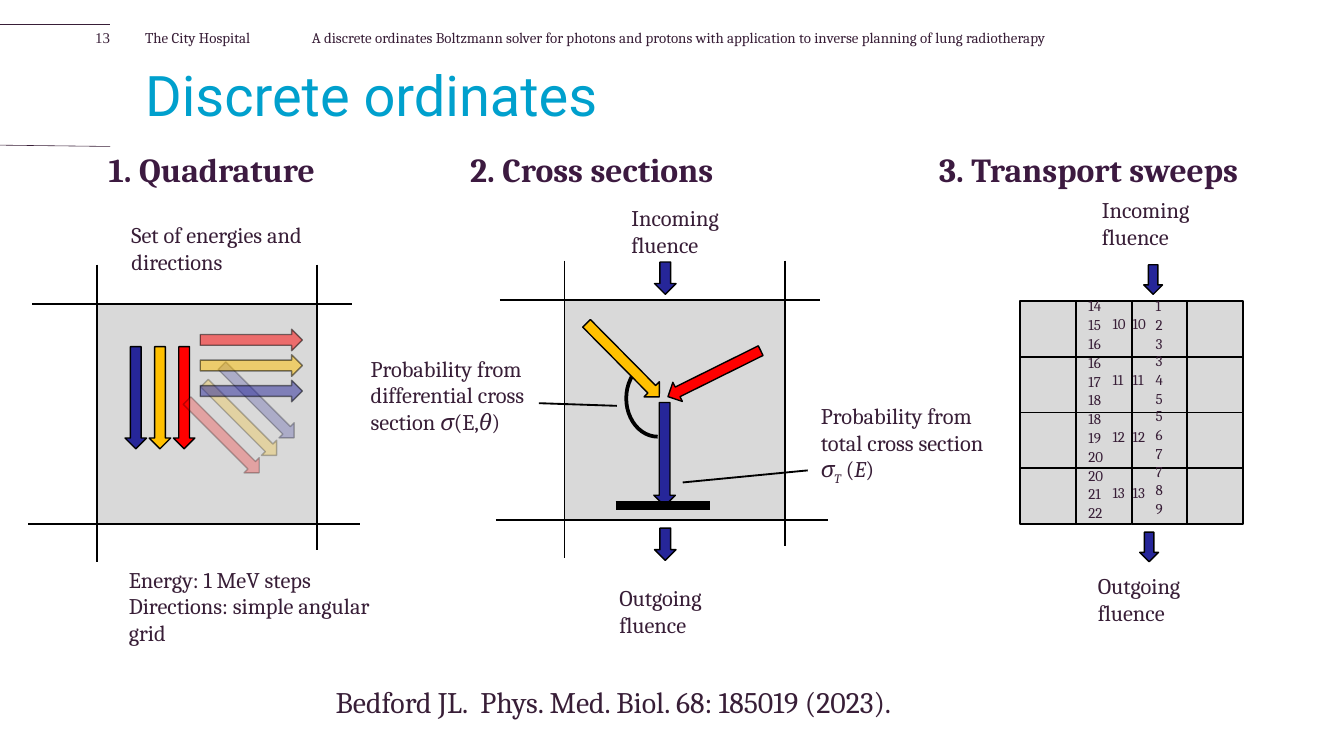
import pptx
import pptx.util
import pptx.dml.color
import pptx.enum.shapes
import pptx.enum.text
import pptx.oxml.ns
from lxml import etree

Inches, Pt = pptx.util.Inches, pptx.util.Pt
SHAPE = pptx.enum.shapes.MSO_SHAPE
INK, HEADING, CYAN = "381E37", "3C1A40", "00A0CD"
BLACK, GREY = "000000", "D9D9D9"
BLUE, YELLOW, RED = "262699", "FFC000", "FF0000"

HEADER = [
    ("The City Hospital", 1.08, 1.24, "Cambria"),
    ("A discrete ordinates Boltzmann solver for photons and protons with application "
     "to inverse planning of lung radiotherapy", 2.32, 6.45, "Cambria"),
    ("13", 0.41, 0.41, "Times New Roman"),
]
HEADER_RULES = [(0, 1.08, 0.82, 1.09), (0, 0.18, 0.82, 0.18)]
TITLE = "Discrete ordinates"
HEADINGS = [("1. Quadrature", 0.71, 2.4), ("2. Cross sections", 3.4, 2.4),
            ("3. Transport sweeps", 6.89, 2.83)]
CITATION = "Bedford JL.  Phys. Med. Biol. 68: 185019 (2023)."

CELL_SIDE = 1.64
CELL_LINES = [(-0.48, 0, 1.9, 0), (-0.51, 1.64, 1.96, 1.64),
              (0, -0.29, 0, 1.92), (1.64, -0.29, 1.64, 1.83)]

CROSS_ARROWS = [(4.93, 2.7, 0.77, 0.16, 153.6, RED), (4.25, 2.6, 0.77, 0.16, 45.3, YELLOW),
                (4.56, 3.3, 0.77, 0.16, 90, BLUE), (4.83, 3.97, 0.24, 0.16, 90, BLUE),
                (4.83, 1.99, 0.24, 0.16, 90, BLUE)]
CROSS_LINES = [(4.58, 3.76, 5.28, 3.76, 5), (6.01, 3.5, 5.08, 3.59, 1),
               (4.59, 3.02, 4.01, 3, 1)]
CROSS_LABELS = [
    ([[("Probability from differential cross section ", ""), ("σ", "i"), ("(E,", ""),
       ("θ", "i"), (")", "")]], 2.66, 2.59, 1.54, 1.36),
    ([[("Probability from total cross section ", ""), ("σ", "i"), ("T", "is"), (" (", ""),
       ("E", "i"), (")", "")]], 6.01, 2.94, 1.43, 1.11),
    ("Incoming fluence", 4.6, 1.47, 1.24, 0.62),
    ("Outgoing fluence", 4.51, 4.3, 1.24, 0.62),
]
QUADRATURE_LABELS = [
    ("Set of energies and directions", 0.88, 1.6, 2.06, 0.5),
    ("Energy: 1 MeV steps\nDirections: simple angular\ngrid", 0.86, 4.16, 2.91, 0.71),
]
QUADRATURE_SETS = [
    ((RED, YELLOW, BLUE), 0.99, 2.88, -0.18, 0, 90, 100),
    ((BLUE, YELLOW, RED), 1.54, 2.91, -0.13, 0.13, 45, 25),
    ((RED, YELLOW, BLUE), 1.49, 2.45, 0, 0.19, 0, 50),
]
SWEEP_LABELS = [("Incoming fluence", 8.1, 1.41, 1.12, 0.51),
                ("Outgoing fluence", 8.07, 4.21, 1.12, 0.51)]
SWEEP_ARROWS = [(8.47, 2.01), (8.44, 4)]
SWEEP_COLUMNS = [
    (1, 3, 2, 8.5, 2.16, 0.27, 0.41, 0.14),
    (14, 3, 2, 8, 2.16, 0.45, 0.42, 0.14),
    (10, 1, 1, 8.33, 2.29, 0.5, 0.42, 0),
    (10, 1, 1, 8.18, 2.29, 0.43, 0.42, 0),
]
GRID_LEFT, GRID_TOP, GRID_SIDE, GRID_COUNT = 7.59, 2.24, 1.66, 4


def rgb(color):
    return pptx.dml.color.RGBColor.from_string(color)


def add_line(parent, x1, y1, x2, y2, width=1, color=BLACK):
    line = parent.shapes.add_connector(
        pptx.enum.shapes.MSO_CONNECTOR.STRAIGHT,
        Inches(x1), Inches(y1), Inches(x2), Inches(y2))
    line.line.color.rgb = rgb(color)
    line.line.width = Pt(width)
    etree.SubElement(line._element.spPr, pptx.oxml.ns.qn("a:effectLst"))


def add_shape(parent, kind, left, top, width, height, fill=None, line=0.75, turn=0, opacity=100):
    shape = parent.shapes.add_shape(
        kind, Inches(left), Inches(top), Inches(width), Inches(height))
    shape.shadow.inherit = False
    shape.rotation = turn
    shape.line.color.rgb = rgb(BLACK)
    shape.line.width = Pt(line)
    if fill:
        shape.fill.solid()
        shape.fill.fore_color.rgb = rgb(fill)
    else:
        shape.fill.background()
    if opacity < 100:
        for color in shape._element.spPr.iter(pptx.oxml.ns.qn("a:srgbClr")):
            alpha = etree.SubElement(color, pptx.oxml.ns.qn("a:alpha"))
            alpha.set("val", str(opacity * 1000))
    return shape


def add_arrow(parent, left, top, width, height, turn, fill, opacity=100):
    add_shape(parent, SHAPE.RIGHT_ARROW, left, top, width, height, fill, 0.75, turn, opacity)


def add_text(parent, content, left, top, width, height, size=12, color=INK,
             font="Cambria", bold=False, inset=True, wrap=True):
    box = parent.shapes.add_textbox(Inches(left), Inches(top), Inches(width), Inches(height))
    frame = box.text_frame
    frame.word_wrap = wrap
    if inset:
        frame.auto_size = pptx.enum.text.MSO_AUTO_SIZE.SHAPE_TO_FIT_TEXT
    else:
        frame.margin_left = frame.margin_right = frame.margin_top = frame.margin_bottom = 0
    if isinstance(content, str):
        content = [[(text, "")] for text in content.split("\n")]
    for index, spans in enumerate(content):
        para = frame.add_paragraph() if index else frame.paragraphs[0]
        for text, style in spans:
            span = para.add_run()
            span.text = text
            span.font.size = Pt(size)
            span.font.name = font
            span.font.color.rgb = rgb(color)
            span.font.bold = bold
            span.font.italic = "i" in style
            if "s" in style:
                span.font._element.set("baseline", "-25000")
    return frame.paragraphs[0]


def add_cell(parent, left, top):
    add_shape(parent, SHAPE.RECTANGLE, left, top, CELL_SIDE, CELL_SIDE, GREY)
    for x1, y1, x2, y2 in CELL_LINES:
        add_line(parent, left + x1, top + y1, left + x2, top + y2)


def add_cross_sections(group):
    add_cell(group, 4.2, 2.23)
    for arrow in CROSS_ARROWS:
        add_arrow(group, *arrow)
    arc = add_shape(group, SHAPE.ARC, 4.66, 2.68, 0.47, 0.57, line=2)
    arc.adjustments[0], arc.adjustments[1] = 84.29, 161.87
    arc._element.spPr.xfrm.set("flipV", "1")
    for line in CROSS_LINES:
        add_line(group, *line)
    for label in CROSS_LABELS:
        add_text(group, *label)


def add_quadrature(group):
    add_cell(group, 0.72, 2.26)
    for colors, left, top, step_x, step_y, turn, opacity in QUADRATURE_SETS:
        for index, color in enumerate(colors):
            add_arrow(group, left + index * step_x, top + index * step_y,
                      0.76, 0.16, turn, color, opacity)
    for label in QUADRATURE_LABELS:
        add_text(group, *label)


def add_sweeps(group):
    side = GRID_SIDE / GRID_COUNT
    for row in range(GRID_COUNT):
        for column in range(GRID_COUNT):
            add_shape(group, SHAPE.RECTANGLE, GRID_LEFT + column * side,
                      GRID_TOP + row * side, side, side, GREY, 1)
    for first, count, stride, left, top, width, pitch, step in SWEEP_COLUMNS:
        for row in range(GRID_COUNT):
            for index in range(count):
                add_text(group, str(first + row * stride + index), left,
                         top + row * pitch + index * step, width, 0.24, 8)
    for left, top in SWEEP_ARROWS:
        add_arrow(group, left, top, 0.22, 0.14, 90, BLUE)
    for label in SWEEP_LABELS:
        add_text(group, *label)


def main():
    deck = pptx.Presentation()
    deck.slide_width = Inches(10)
    deck.slide_height = deck.slide_width * 9 // 16
    page = deck.slides.add_slide(deck.slide_layouts[6])
    for rule in HEADER_RULES:
        add_line(page, *rule, 0.31, INK)
    for text, left, width, font in HEADER:
        para = add_text(page, text, left, 0.21, width, 0.21, 8, font=font, inset=False)
        if text.isdigit():
            para.alignment = pptx.enum.text.PP_ALIGN.RIGHT
    title = add_text(page, TITLE, 1.08, 0.51, 8.42, 0.67, 30, CYAN, "Roboto", inset=False)
    title.line_spacing = Pt(31.9)
    for build in (add_cross_sections, add_quadrature, add_sweeps):
        build(page.shapes.add_group_shape())
    for text, left, width in HEADINGS:
        add_text(page, text, left, 1.06, width, 0.4, 18, HEADING, bold=True)
    add_text(page, CITATION, 2.4, 5.04, 5.04, 0.37, 16, wrap=False)
    deck.save("out.pptx")


if __name__ == "__main__":
    main()
